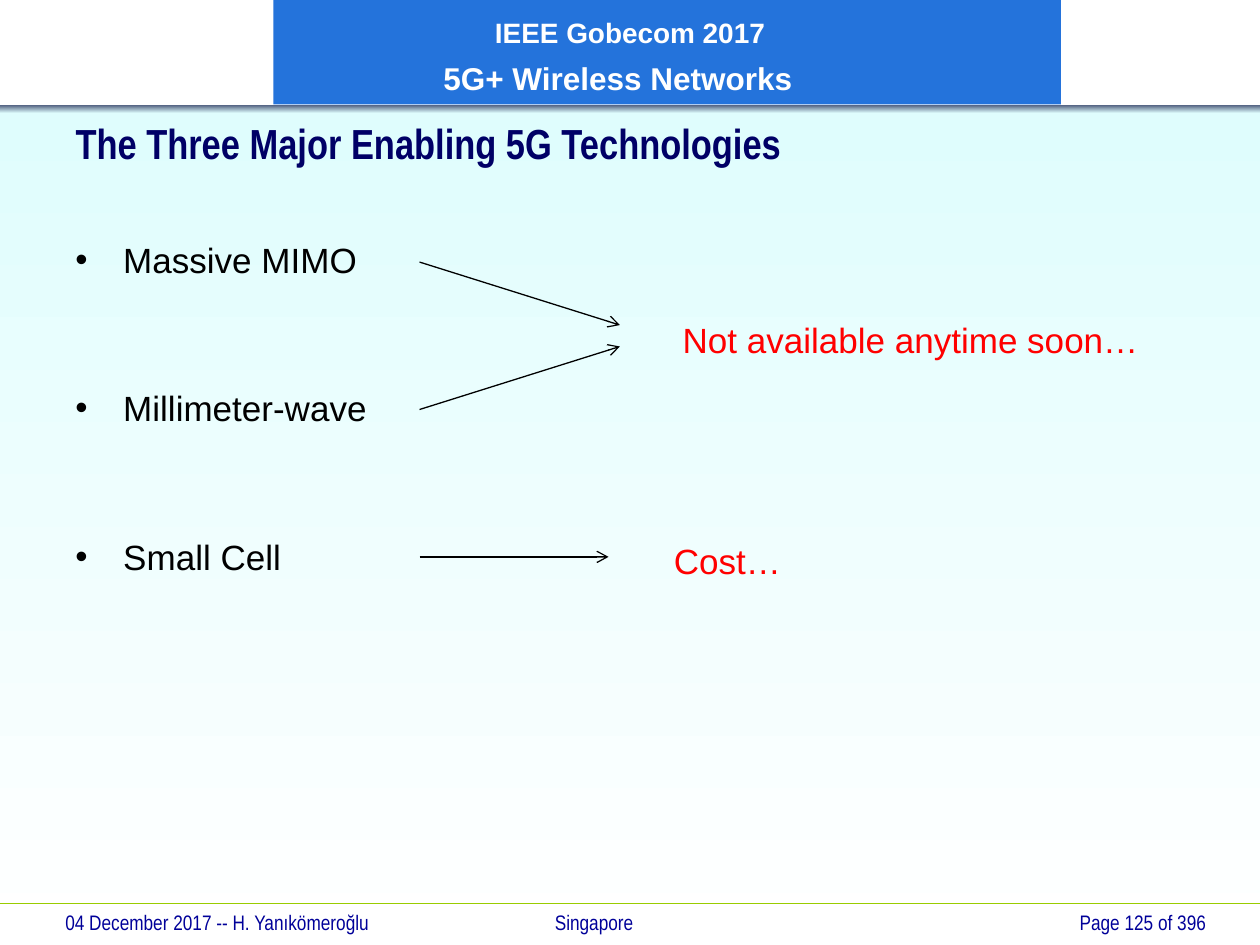
from lxml.etree import SubElement
from pptx import Presentation
from pptx.dml.color import RGBColor
from pptx.enum.shapes import MSO_CONNECTOR as Connector, MSO_SHAPE as Shape
from pptx.enum.text import MSO_ANCHOR as Anchor, PP_ALIGN as Align
from pptx.oxml.ns import qn
from pptx.util import Inches, Pt

COLORS = {
    "sky": "DFFDFD", "white": "FFFFFF", "slate": "475577", "banner": "2473DB",
    "rule": "99CC00", "footer": "000099", "title": "000066",
    "black": "000000", "remark": "FF0000",
}


def rgb(name):
    return RGBColor.from_string(COLORS[name])


def format_text(paragraph, size, color, bold=False, face="Arial"):
    for run in paragraph.runs:
        run.font.size = Pt(size)
        run.font.name = face
        run.font.bold = bold
        run.font.color.rgb = rgb(color)


def add_rectangle(slide, box, *colors):
    """One colour gives a solid fill, two a vertical gradient."""
    rectangle = slide.shapes.add_shape(Shape.RECTANGLE, *map(Inches, box))
    rectangle.shadow.inherit = False
    rectangle.line.fill.background()
    if len(colors) == 1:
        rectangle.fill.solid()
        rectangle.fill.fore_color.rgb = rgb(colors[0])
    else:
        rectangle.fill.gradient()
        rectangle.fill.gradient_angle = 270
        for stop, position, color in zip(rectangle.fill.gradient_stops, (0, 1), colors):
            stop.position = position
            stop.color.rgb = rgb(color)
    return rectangle


def add_line(slide, start, end, color, arrow=False):
    line = slide.shapes.add_connector(
        Connector.STRAIGHT, *map(Inches, (*start, *end)))
    line.line.color.rgb = rgb(color)
    line.line.width = Pt(0.75)
    properties = line._element.spPr
    SubElement(properties, qn("a:effectLst"))
    if arrow:
        SubElement(properties.find(qn("a:ln")), qn("a:tailEnd"), type="arrow")


def add_text(slide, box, text, size, color, face="Arial", align=Align.LEFT):
    frame = slide.shapes.add_textbox(*map(Inches, box)).text_frame
    frame.word_wrap = True
    frame.text = text
    frame.paragraphs[0].alignment = align
    format_text(frame.paragraphs[0], size, color, face=face)


def add_banner(slide, left, top, width, height):
    banner = add_rectangle(slide, (left, top, width, height), "banner")
    frame = banner.text_frame
    frame.word_wrap = True
    frame.vertical_anchor = Anchor.MIDDLE
    frame.margin_top = Inches(0.08)
    frame.text = "IEEE Gobecom 2017\n5G+ Wireless Networks"
    for paragraph, size, indent in zip(frame.paragraphs, (16, 18), (1.66, 1.25)):
        paragraph.alignment = Align.LEFT
        paragraph.line_spacing = 1.1
        paragraph._p.get_or_add_pPr().set("marL", str(Inches(indent)))
        format_text(paragraph, size, "white", bold=True)
    frame.paragraphs[1].space_before = Pt(3.6)


def place_title(slide, left, top, width, height):
    title = slide.shapes.title
    title.left, title.top, title.width, title.height = map(
        Inches, (left, top, width, height))
    # Bring the title in front of the background
    title._element.getparent().append(title._element)
    frame = title.text_frame
    frame.text = "The Three Major Enabling 5G Technologies"
    frame.vertical_anchor = Anchor.MIDDLE
    frame.paragraphs[0].alignment = Align.LEFT
    format_text(frame.paragraphs[0], 24, "title", bold=True, face="Arial Narrow")


def add_technologies(slide, left, top, width, height):
    frame = slide.shapes.add_textbox(
        *map(Inches, (left, top, width, height))).text_frame
    frame.word_wrap = True
    frame.text = "Massive MIMO\nMillimeter-wave\nSmall Cell"
    for index, paragraph in enumerate(frame.paragraphs):
        properties = paragraph._p.get_or_add_pPr()
        properties.set("marL", str(Inches(0.38)))
        properties.set("indent", str(Inches(-0.38)))
        SubElement(properties, qn("a:buFont"), typeface="Arial")
        SubElement(properties, qn("a:buChar"), char="•")
        if index:
            paragraph.space_before = Pt(61)
        format_text(paragraph, 20, "black")


def add_remarks(slide, left, top):
    """Arrows from the technologies to what holds each one back."""
    arrows = [((0, 0), (1.59, 0.5)),
              ((0, 1.17), (1.59, 0.67)),
              ((0, 2.34), (1.5, 2.34))]
    for start, end in arrows:
        add_line(slide, (left + start[0], top + start[1]),
                 (left + end[0], top + end[1]), "black", arrow=True)
    add_text(slide, (left + 1.99, top + 0.4, 4, 0.44),
             "Not available anytime soon…", 20, "remark")
    add_text(slide, (left + 1.92, top + 2.15, 1.2, 0.44), "Cost…", 20, "remark")


def add_footer(slide, left, top, width, height):
    add_line(slide, (0, top), (10, top), "rule")
    entries = [("04 December 2017 -- H. Yanıkömeroğlu", Align.LEFT),
               ("Singapore", Align.CENTER),
               ("Page 125 of 396", Align.RIGHT)]
    column = width / len(entries)
    for index, (text, align) in enumerate(entries):
        # The place name sits a little left of the middle
        shift = -0.33 if align == Align.CENTER else 0
        add_text(slide, (left + index * column + shift, top, column, height),
                 text, 12, "footer", "Arial Narrow", align)


def main():
    deck = Presentation()
    deck.slide_width, deck.slide_height = Inches(10), Inches(7.5)
    slide = deck.slides.add_slide(deck.slide_layouts[5])

    # Background and header
    add_rectangle(slide, (0, 0.86, 10, 6.64), "sky", "white")
    add_rectangle(slide, (0, 0.83, 10, 0.07), "slate", "sky")
    add_banner(slide, 2.17, 0, 6.25, 0.83)

    # Content
    place_title(slide, 0.5, 0.92, 6.92, 0.42)
    add_technologies(slide, 0.5, 1.84, 9, 5.08)
    add_remarks(slide, 3.33, 2.08)

    # Footer
    add_footer(slide, 0.42, 7.17, 9.25, 0.3)
    deck.save("out.pptx")


if __name__ == "__main__":
    main()
